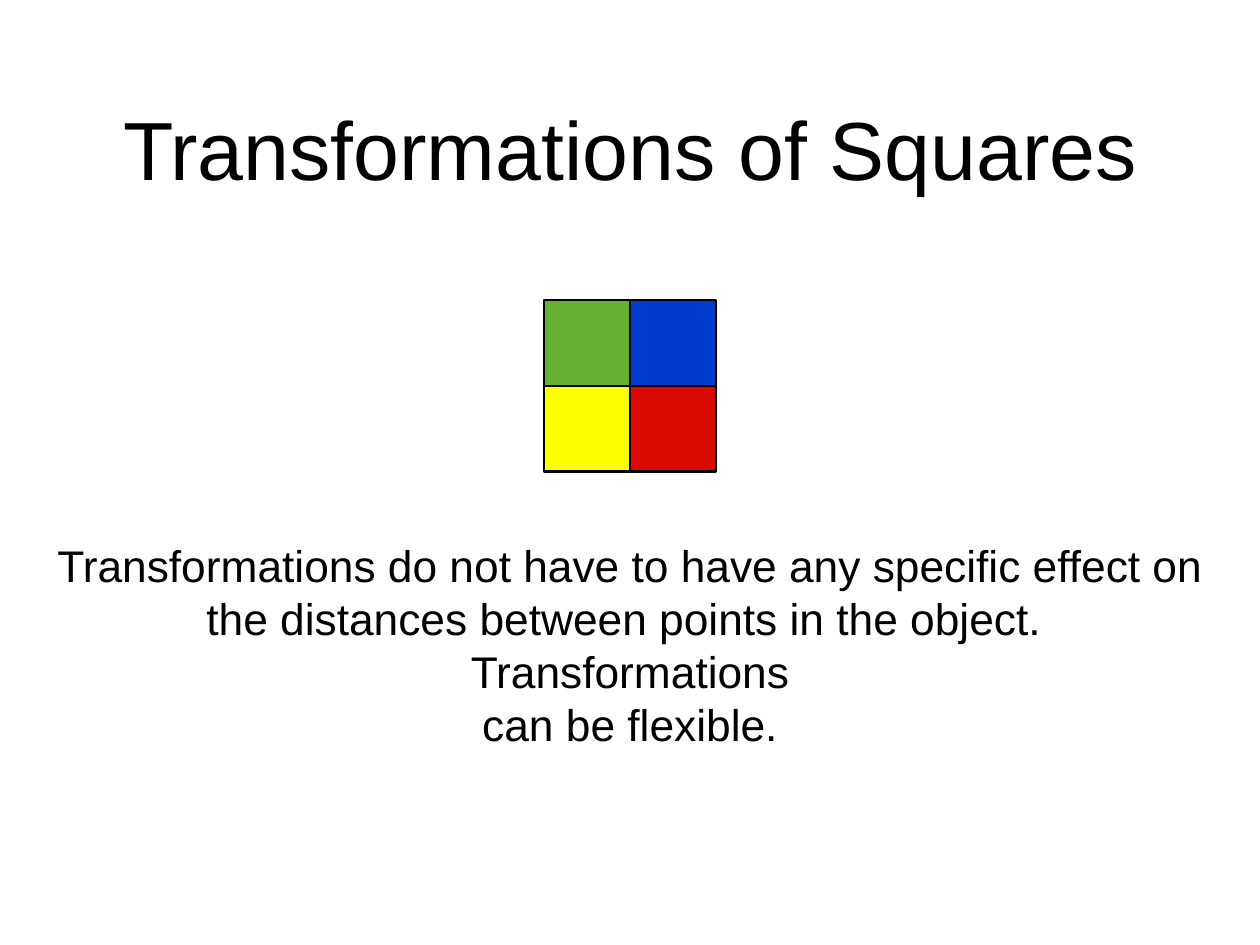
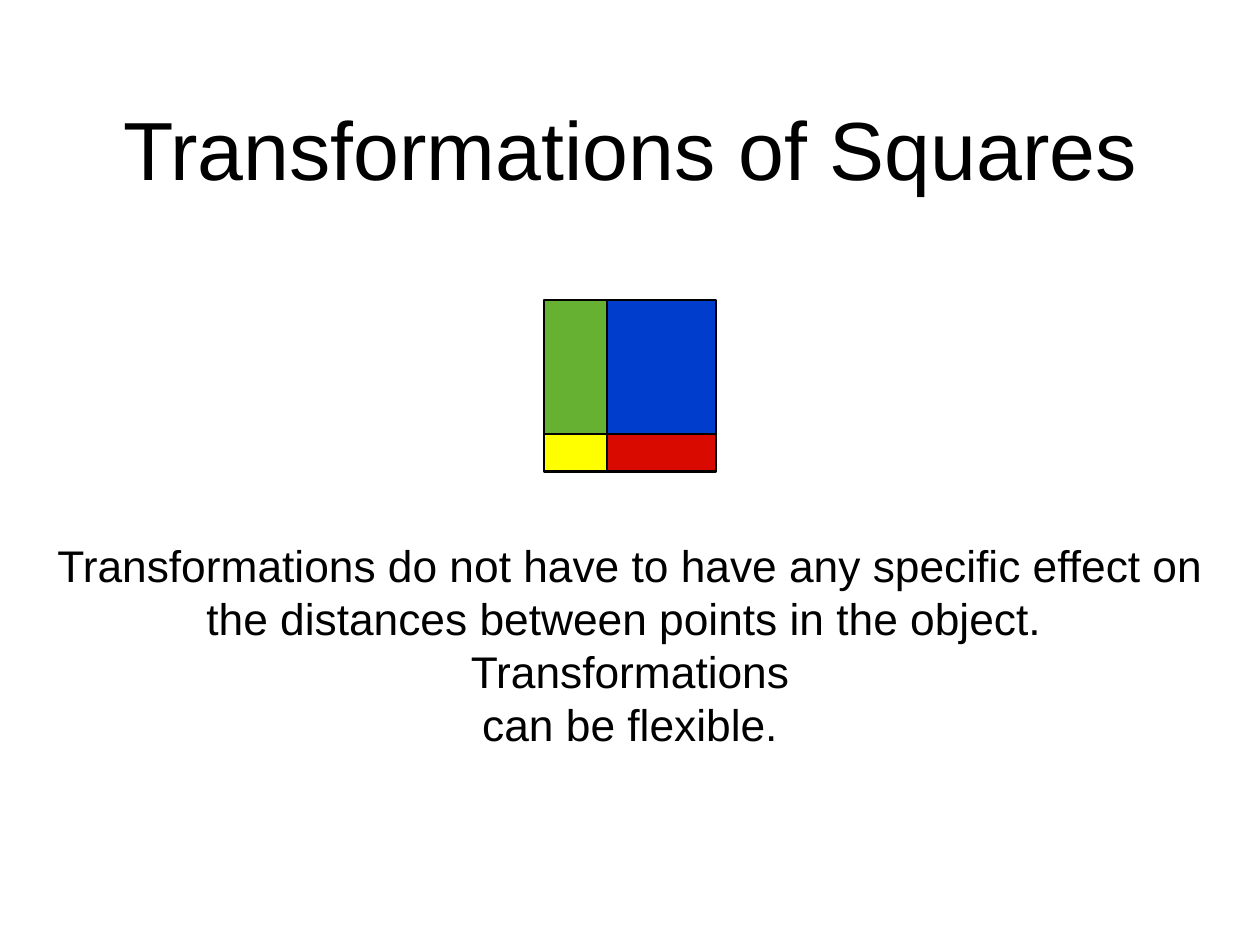
from pptx import Presentation
from pptx.dml.color import RGBColor
from pptx.enum.shapes import MSO_SHAPE
from pptx.enum.text import MSO_ANCHOR, PP_ALIGN
from pptx.util import Cm, Pt

RECTANGLE = MSO_SHAPE.RECTANGLE
MIDDLE = MSO_ANCHOR.MIDDLE
CENTER = PP_ALIGN.CENTER

BLACK = "000000"
GREEN, BLUE, YELLOW, RED = "66B132", "003DCC", "FFFF00", "D90B00"

TITLE = ["Transformations of Squares"]
STATEMENT = [
    "Transformations do not have to have any specific effect on",
    "the distances between points in the object.  Transformations",
    "can be flexible.",
]
TITLE_AREA = (2.64, 1.24, 30.84, 6)
STATEMENT_AREA = (1.42, 15.43, 33.28, 6.1)
INSET = 0.15

SQUARE_LEFT, SQUARE_TOP, SQUARE_SIDE = 15.6, 8.61, 4.92
QUADRANTS = [
    (RED, 1, 1),
    (YELLOW, 0, 1),
    (GREEN, 0, 0),
    (BLUE, 1, 0),
]
SPLITS = [(2.46, 2.46), (1.8, 3.84)]


def color(value):
    return RGBColor.from_string(value)


def add_text(page, area, lines, size):
    frame = page.shapes.add_textbox(*map(Cm, area)).text_frame
    frame_format = {"word_wrap": True, "vertical_anchor": MIDDLE}
    for side in ("left", "top", "right", "bottom"):
        frame_format[f"margin_{side}"] = Cm(INSET)
    for name, value in frame_format.items():
        setattr(frame, name, value)
    frame.text = "\n".join(lines)
    for para in frame.paragraphs:
        para.alignment = CENTER
        for name, value in {"name": "Arial", "size": Pt(size)}.items():
            setattr(para.font, name, value)
        para.font.color.rgb = color(BLACK)


def add_square(page, split):
    across, down = [((0, cut), (cut, SQUARE_SIDE - cut)) for cut in split]
    for fill, column, row in QUADRANTS:
        left, width = across[column]
        top, height = down[row]
        area = (SQUARE_LEFT + left, SQUARE_TOP + top, width, height)
        box = page.shapes.add_shape(RECTANGLE, *map(Cm, area))
        box.shadow.inherit = False
        box.fill.solid()
        box.fill.fore_color.rgb = color(fill)
        box.line.color.rgb = color(BLACK)
        box.line.width = Pt(2)


def main():
    deck = Presentation()
    deck.slide_width, deck.slide_height = Cm(36.12), Cm(27.1)
    for split in SPLITS:
        page = deck.slides.add_slide(deck.slide_layouts[6])
        add_square(page, split)
        add_text(page, TITLE_AREA, TITLE, 67)
        add_text(page, STATEMENT_AREA, STATEMENT, 36)
    deck.save("out.pptx")


if __name__ == "__main__":
    main()
